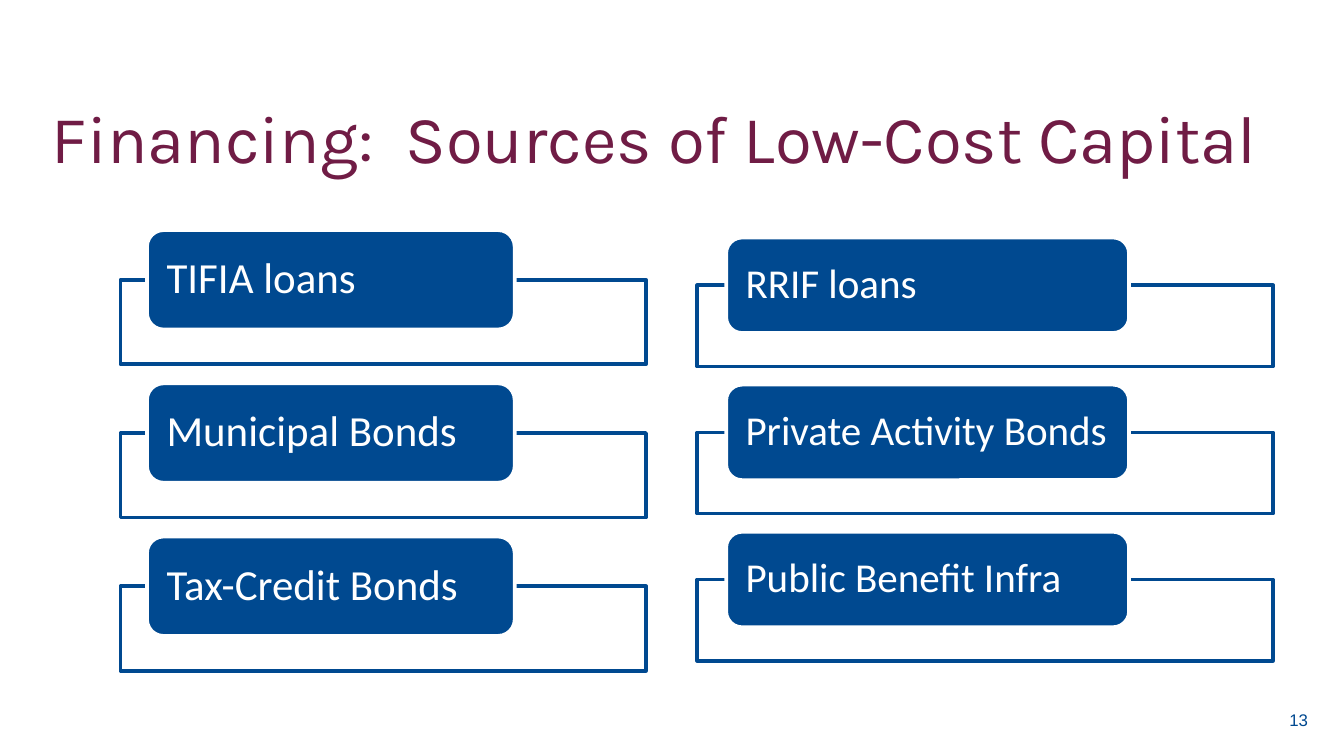
import pptx
import pptx.dml.color
import pptx.enum.shapes
import pptx.enum.text
import pptx.oxml.ns
import pptx.util
from lxml import etree
from pptx.util import Cm

COLORS = {"blue": "004990", "plum": "701C45", "white": "FFFFFF"}
SHAPE = pptx.enum.shapes.MSO_SHAPE
ALIGN = pptx.enum.text.PP_ALIGN
ANCHOR = pptx.enum.text.MSO_ANCHOR


def rgb(name):
    """Return the named colour."""
    return pptx.dml.color.RGBColor.from_string(COLORS[name])


def set_text(shape, text, font, size, color, align, anchor, left=0, right=0, vertical=0.13):
    """Write one styled paragraph into a shape, with insets in cm."""
    tf = shape.text_frame
    tf.word_wrap = True
    tf.vertical_anchor = anchor
    tf.margin_left, tf.margin_right = Cm(left), Cm(right)
    tf.margin_top = tf.margin_bottom = Cm(vertical)
    p = tf.paragraphs[0]
    p.text = text
    p.alignment = align
    p.font.name = font
    p.font.size = pptx.util.Pt(size)
    p.font.color.rgb = rgb(color)
    return p


def add_panel(s, kind, box, fill, line):
    """Add a filled and outlined shape in a box given in cm."""
    sp = s.shapes.add_shape(kind, *map(Cm, box))
    sp.shadow.inherit = False
    sp.fill.solid()
    sp.fill.fore_color.rgb = rgb(fill)
    sp.line.color.rgb = rgb(line)
    sp.line.width = pptx.util.Pt(2)
    return sp


def add_title(s, box, text):
    """Add the slide title."""
    sp = s.shapes.add_textbox(*map(Cm, box))
    p = set_text(sp, text, "Karla", 36, "plum", ALIGN.CENTER, ANCHOR.TOP, right=0.95)
    p.line_spacing = pptx.util.Pt(40)


def add_page_number(s, box, number):
    """Add the slide number."""
    sp = s.shapes.add_textbox(*map(Cm, box))
    set_text(sp, number, "Arial", 9, "blue", ALIGN.RIGHT, ANCHOR.MIDDLE, left=0.25)


def add_source_list(s, box, labels, size):
    """Stack labelled tabs, each overlapping the frame below it."""
    left, top, width, height = box
    pitch_ratio, frame_ratio = 1.54, 0.85
    tab_h = height / (pitch_ratio * (len(labels) - 1) + 0.5 + frame_ratio)
    for i, label in enumerate(labels):
        y = top + i * pitch_ratio * tab_h
        frame_box = (left, y + tab_h / 2, width, frame_ratio * tab_h)
        frame = add_panel(s, SHAPE.RECTANGLE, frame_box, "white", "blue")
        fill = frame.fill._xPr.find(".//" + pptx.oxml.ns.qn("a:srgbClr"))
        etree.SubElement(fill, pptx.oxml.ns.qn("a:alpha"), val="90000")
        tab_box = (left + 0.05 * width, y, 0.7 * width, tab_h)
        tab = add_panel(s, SHAPE.ROUNDED_RECTANGLE, tab_box, "blue", "white")
        p = set_text(tab, label, "Calibri", size, "white", ALIGN.LEFT, ANCHOR.MIDDLE,
                     left=0.28, right=0.28, vertical=0)
        p.line_spacing = 0.9


def main():
    """Build and save the slide."""
    prs = pptx.Presentation()
    prs.slide_width, prs.slide_height = Cm(25.4), Cm(14.29)
    s = prs.slides.add_slide(prs.slide_layouts[6])
    add_title(s, (0.71, 1.8, 24.28, 1.47), "Financing:  Sources of Low-Cost Capital")
    add_source_list(s, (2.28, 4.35, 9.93, 8.33),
                    ["TIFIA loans", "Municipal Bonds", "Tax-Credit Bonds"], 23)
    add_source_list(s, (13.18, 4.49, 10.88, 8),
                    ["RRIF loans", "Private Activity Bonds", "Public Benefit Infra"], 22)
    add_page_number(s, (18.8, 13.23, 5.92, 0.76), "13")
    prs.save("out.pptx")


if __name__ == "__main__":
    main()
